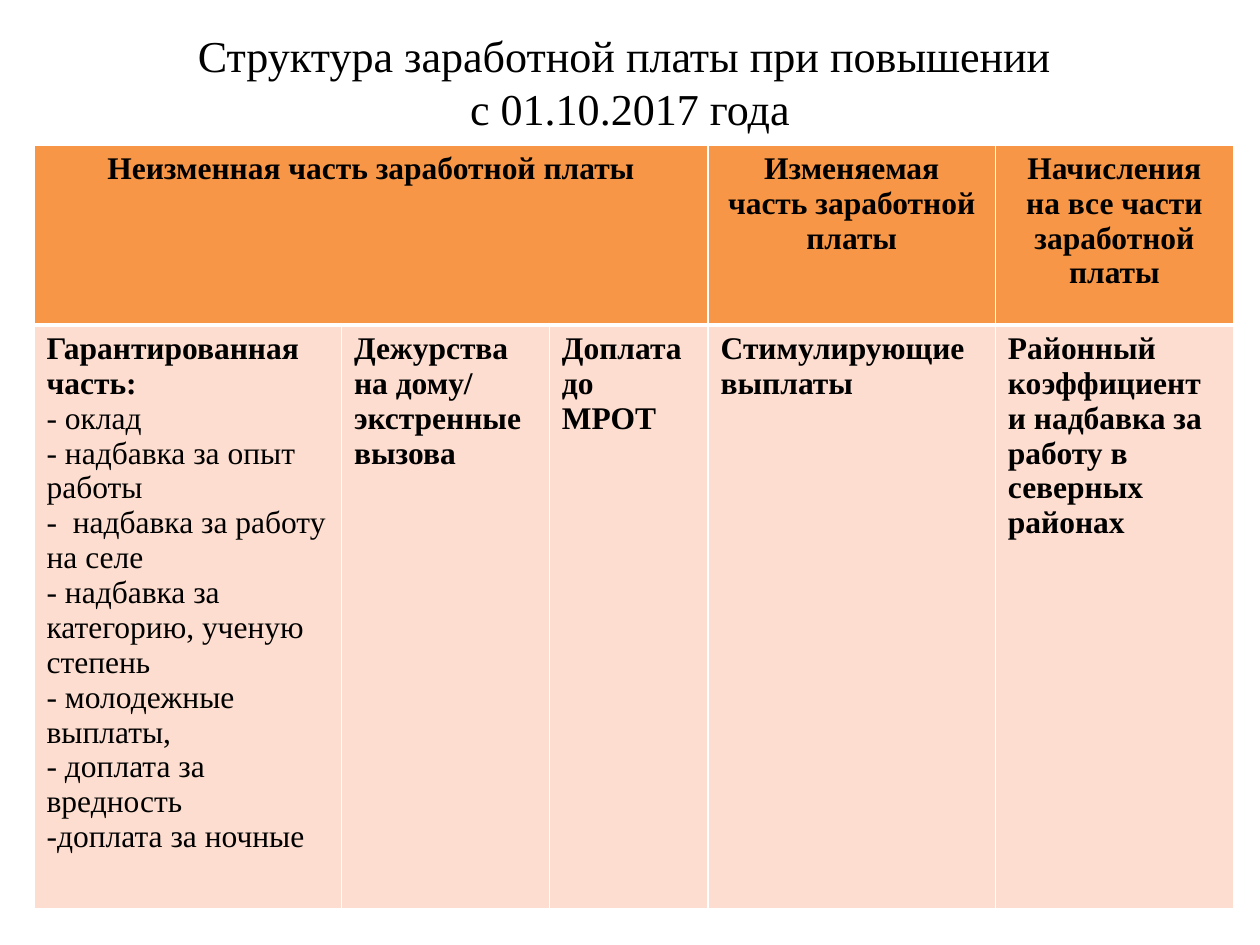
from pptx import Presentation
from pptx.dml.color import RGBColor
from pptx.enum.text import MSO_ANCHOR, MSO_AUTO_SIZE, PP_ALIGN
from pptx.oxml.ns import qn
from pptx.util import Inches, Pt
from lxml.etree import SubElement

COLORS = {"text": "000000", "header": "F79646", "body": "FCDDCF", "border": "FFFFFF"}


class Deck:
    font = "Times New Roman"

    def __init__(self, prs):
        self.s = prs.slides.add_slide(prs.slide_layouts[5])

    def color(self, name):
        return RGBColor.from_string(COLORS[name])

    def run(self, p, text, size, bold=False):
        r = p.add_run()
        r.text = text
        r.font.name = self.font
        r.font.size = Pt(size)
        r.font.bold = bold
        r.font.color.rgb = self.color("text")

    def title(self, lines, left, top, width, height):
        sp = self.s.shapes.title
        sp.left, sp.top = Inches(left), Inches(top)
        sp.width, sp.height = Inches(width), Inches(height)
        tf = sp.text_frame
        tf.word_wrap = True
        tf.auto_size = MSO_AUTO_SIZE.NONE
        tf.vertical_anchor = MSO_ANCHOR.MIDDLE
        p = tf.paragraphs[0]
        p.alignment = PP_ALIGN.CENTER
        for i, line in enumerate(lines):
            if i:
                p.add_line_break()
            self.run(p, line, 25.2)

    def table(self, left, top, widths, heights):
        frame = self.s.shapes.add_table(
            len(heights), len(widths), Inches(left), Inches(top),
            Inches(sum(widths)), Inches(sum(heights)))
        tbl = frame.table
        for col, width in zip(tbl.columns, widths):
            col.width = Inches(width)
        for row, height in zip(tbl.rows, heights):
            row.height = Inches(height)
        return tbl

    def borders(self, cell, bottom, top):
        tc_pr = cell._tc.get_or_add_tcPr()
        for side, width in (("L", 1), ("R", 1), ("T", top), ("B", bottom)):
            ln = SubElement(tc_pr, qn(f"a:ln{side}"), w=str(Pt(width)))
            fill = SubElement(ln, qn("a:solidFill"))
            SubElement(fill, qn("a:srgbClr"), val=COLORS["border"])

    def cell(self, cell, paragraphs, header=False):
        # Borders precede the fill in the cell properties
        self.borders(cell, bottom=3 if header else 1, top=1 if header else 3)
        cell.fill.solid()
        cell.fill.fore_color.rgb = self.color("header" if header else "body")
        tf = cell.text_frame
        for i, (text, bold) in enumerate(paragraphs):
            p = tf.add_paragraph() if i else tf.paragraphs[0]
            p.alignment = PP_ALIGN.CENTER if header else PP_ALIGN.LEFT
            self.run(p, text, 18, bold)


def main():
    prs = Presentation()
    prs.slide_width, prs.slide_height = Inches(10), Inches(7.5)
    deck = Deck(prs)

    # Title
    deck.title(["Структура заработной платы при повышении ", "с 01.10.2017 года"],
               0.5, 0.3, 9, 0.69)

    # Pay structure table
    tbl = deck.table(0.27, 1.15, [2.44, 1.65, 1.26, 2.28, 1.89], [1.43, 4.63])

    # Header row: the fixed part spans three columns
    tbl.cell(0, 0).merge(tbl.cell(0, 2))
    headers = {
        0: "Неизменная часть заработной платы",
        3: "Изменяемая часть заработной платы",
        4: "Начисления на все части заработной платы",
    }
    for col in range(5):
        text = headers.get(col)
        deck.cell(tbl.cell(0, col), [(text, True)] if text else [], header=True)

    # Components of each part
    guaranteed = [
        "- оклад",
        "- надбавка за опыт работы",
        "-  надбавка за работу на селе",
        "- надбавка за категорию, ученую степень",
        "- молодежные выплаты,",
        "- доплата за вредность",
        "-доплата за ночные",
    ]
    components = [
        [("Гарантированная часть:", True)] + [(item, False) for item in guaranteed],
        [("Дежурства на дому/", True), ("экстренные вызова", True)],
        [("Доплата до МРОТ", True)],
        [("Стимулирующие выплаты", True)],
        [("Районный коэффициент и надбавка за работу в северных районах", True)],
    ]
    for col, paragraphs in enumerate(components):
        deck.cell(tbl.cell(1, col), paragraphs)

    prs.save("out.pptx")


if __name__ == "__main__":
    main()
